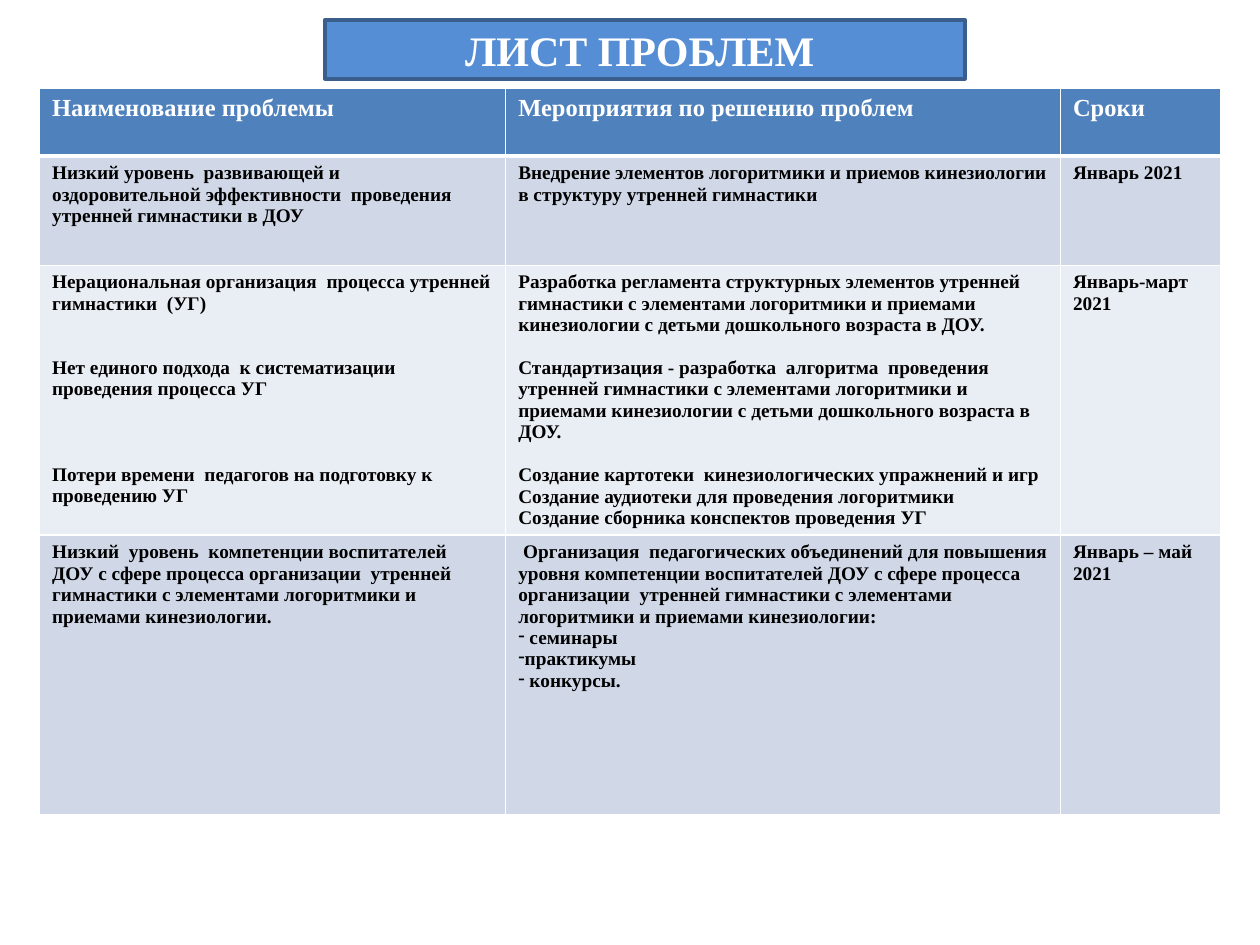
from dataclasses import dataclass

from lxml import etree
from pptx import Presentation
from pptx.dml.color import RGBColor
from pptx.enum import shapes, text
from pptx.oxml import ns
from pptx.util import Pt


@dataclass(frozen=True)
class Theme:
    font: str = "Times New Roman"
    title_size: float = 24
    header_size: float = 14
    body_size: float = 11
    line_height: float = 12.18
    white: str = "FFFFFF"
    black: str = "000000"
    banner: str = "558ED5"
    banner_line: str = "3A5F8C"
    header: str = "4F81BD"
    bands: tuple = ("D0D8E8", "E9EDF4")


@dataclass(frozen=True)
class Item:
    """A paragraph with a gap above, counted in body lines, and a bullet."""
    words: str
    gap: int = 0
    bullet: str = ""


class SlideBuilder:
    def __init__(self, page, theme):
        self.page = page
        self.theme = theme

    def add_span(self, para, words, size, color):
        span = para.add_run()
        span.text = words
        span.font.name = self.theme.font
        span.font.size = Pt(size)
        span.font.bold = True
        span.font.color.rgb = RGBColor.from_string(color)

    def banner(self, words, left, top, width, height):
        theme = self.theme
        box = self.page.shapes.add_shape(
            shapes.MSO_SHAPE.RECTANGLE, Pt(left), Pt(top), Pt(width), Pt(height))
        box.shadow.inherit = False
        box.fill.solid()
        box.fill.fore_color.rgb = RGBColor.from_string(theme.banner)
        box.line.color.rgb = RGBColor.from_string(theme.banner_line)
        box.line.width = Pt(2)
        box.text_frame.vertical_anchor = text.MSO_ANCHOR.MIDDLE
        para = box.text_frame.paragraphs[0]
        para.alignment = text.PP_ALIGN.CENTER
        self.add_span(para, words, theme.title_size, theme.white)

    def table(self, rows, left, top, widths, heights):
        theme = self.theme
        grid = self.page.shapes.add_table(
            len(rows), len(widths), Pt(left), Pt(top),
            Pt(sum(widths)), Pt(sum(heights))).table
        grid.first_row = grid.horz_banding = False
        for column, width in zip(grid.columns, widths):
            column.width = Pt(width)
        for index, (row, height) in enumerate(zip(rows, heights)):
            grid.rows[index].height = Pt(height)
            if index == 0:
                style = theme.header, theme.header_size, theme.white
            else:
                fill = theme.bands[(index - 1) % len(theme.bands)]
                style = fill, theme.body_size, theme.black
            # The thick rule belongs to both cells that share it.
            top_line = 3 if index == 1 else 1
            bottom_line = 3 if index == 0 else 1
            for column, items in enumerate(row):
                cell = grid.cell(index, column)
                self.borders(cell, lnL=1, lnR=1, lnT=top_line, lnB=bottom_line)
                self.fill_cell(cell, items, *style)

    def fill_cell(self, cell, items, fill, size, color):
        cell.fill.solid()
        cell.fill.fore_color.rgb = RGBColor.from_string(fill)
        frame = cell.text_frame
        for index, item in enumerate(items):
            para = frame.add_paragraph() if index else frame.paragraphs[0]
            if item.gap:
                para.space_before = Pt(item.gap * self.theme.line_height)
            if item.bullet:
                self.bullet(para, item.bullet)
            self.add_span(para, item.words, size, color)

    def borders(self, cell, **widths):
        props = cell._tc.get_or_add_tcPr()
        for side, width in widths.items():
            line = etree.SubElement(props, ns.qn(f"a:{side}"), w=str(Pt(width)))
            fill = etree.SubElement(line, ns.qn("a:solidFill"))
            etree.SubElement(fill, ns.qn("a:srgbClr"), val=self.theme.white)

    def bullet(self, para, mark):
        props = para._p.get_or_add_pPr()
        props.set("marL", "0")
        props.set("indent", "0")
        etree.SubElement(props, ns.qn("a:buFontTx"))
        etree.SubElement(props, ns.qn("a:buChar"), char=mark)


PROBLEMS = [
    [[Item("Наименование проблемы")],
     [Item("Мероприятия по решению проблем")],
     [Item("Сроки")]],
    [[Item("Низкий уровень  развивающей и оздоровительной эффективности  "
           "проведения утренней гимнастики в ДОУ")],
     [Item("Внедрение элементов логоритмики и приемов кинезиологии "
           "в структуру утренней гимнастики")],
     [Item("Январь 2021")]],
    [[Item("Нерациональная организация  процесса утренней гимнастики  (УГ)"),
      Item("Нет единого подхода  к систематизации проведения процесса УГ", gap=2),
      Item("Потери времени  педагогов на подготовку к проведению УГ", gap=3)],
     [Item("Разработка регламента структурных элементов утренней гимнастики "
           "с элементами логоритмики и приемами кинезиологии с детьми "
           "дошкольного возраста в ДОУ."),
      Item("Стандартизация - разработка  алгоритма  проведения утренней "
           "гимнастики с элементами логоритмики и приемами кинезиологии "
           "с детьми дошкольного возраста в ДОУ.", gap=1),
      Item("Создание картотеки  кинезиологических упражнений и игр", gap=1),
      Item("Создание аудиотеки для проведения логоритмики"),
      Item("Создание сборника конспектов проведения УГ")],
     [Item("Январь-март 2021")]],
    [[Item("Низкий  уровень  компетенции воспитателей ДОУ с сфере процесса "
           "организации  утренней гимнастики с элементами логоритмики "
           "и приемами кинезиологии.")],
     [Item(" Организация  педагогических объединений для повышения уровня "
           "компетенции воспитателей ДОУ с сфере процесса организации  "
           "утренней гимнастики с элементами логоритмики и приемами "
           "кинезиологии:"),
      Item(" семинары", bullet="-"),
      Item("практикумы", bullet="-"),
      Item(" конкурсы.", bullet="-")],
     [Item("Январь – май 2021")]],
]


def main():
    deck = Presentation()
    deck.slide_width, deck.slide_height = Pt(720), Pt(540)
    page = deck.slides.add_slide(deck.slide_layouts[6])
    builder = SlideBuilder(page, Theme())
    builder.table(PROBLEMS, left=22.6, top=50.6,
                  widths=[266.4, 317, 91.6], heights=[38.6, 62.5, 154.2, 160])
    builder.banner("ЛИСТ ПРОБЛЕМ ", left=185.7, top=11.3, width=365.7, height=33.8)
    deck.save("out.pptx")


if __name__ == "__main__":
    main()
